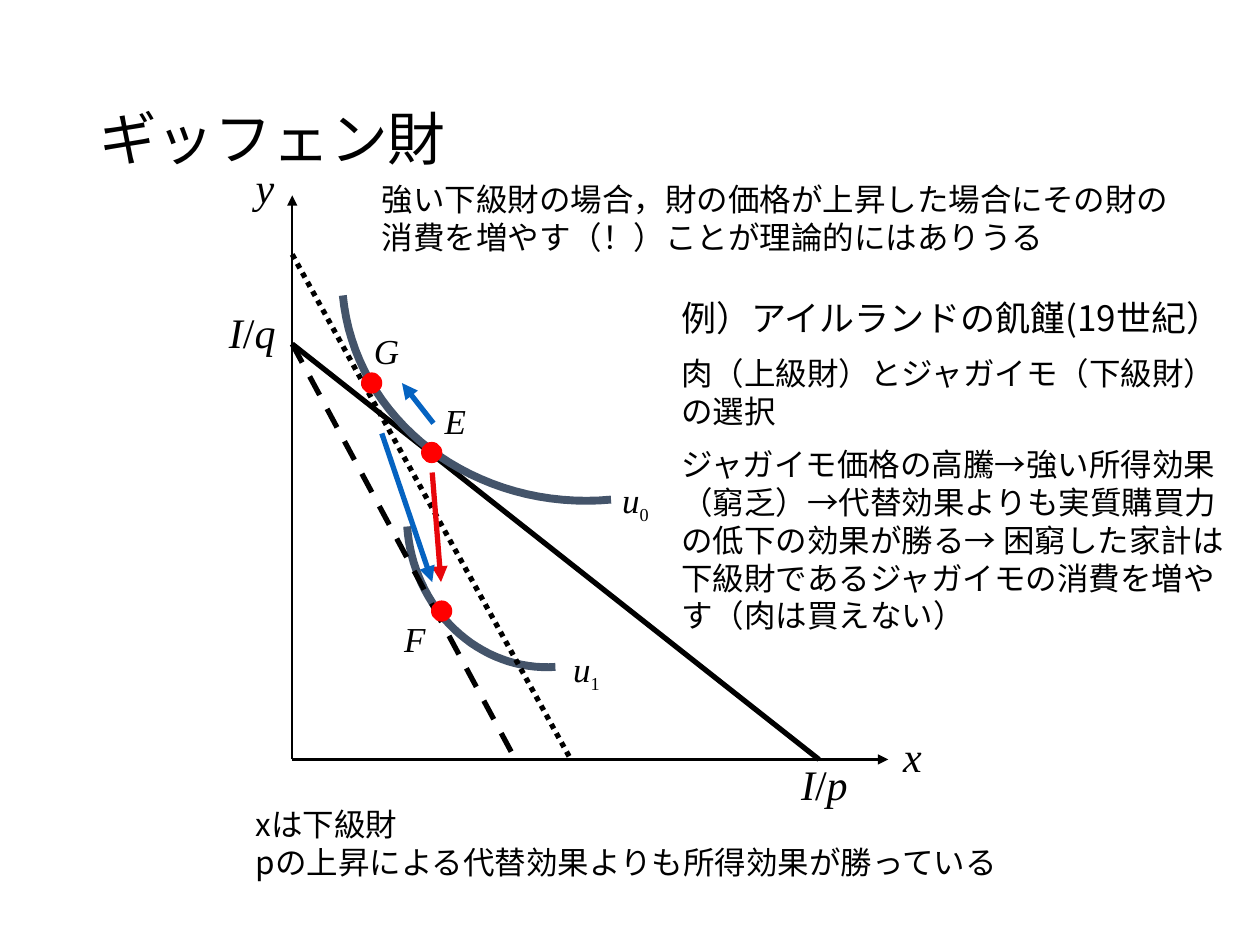
"""Build the slide on Giffen goods: budget lines, indifference curves and notes."""
from math import cos, pi, sin

from lxml.etree import SubElement
from pptx import Presentation
from pptx.dml.color import RGBColor
from pptx.enum.dml import MSO_LINE as Dash
from pptx.enum.shapes import MSO_CONNECTOR as Connector, MSO_SHAPE as Shape
from pptx.enum.text import MSO_ANCHOR as Anchor, MSO_AUTO_SIZE as AutoSize, PP_ALIGN as Align
from pptx.oxml.ns import qn
from pptx.util import Pt

BLACK = RGBColor(0x00, 0x00, 0x00)
SLATE = RGBColor(0x44, 0x54, 0x6A)
BLUE = RGBColor(0x05, 0x63, 0xC1)
CRIMSON = RGBColor(0xE8, 0x06, 0x0B)
RED = RGBColor(0xFF, 0x00, 0x00)
JAPANESE = "Noto Sans CJK JP"
SERIF = "Times New Roman"


def format_span(span, size, name, italic=None):
    span.font.size = Pt(size)
    span.font.name = name
    span.font.italic = italic
    span.font.color.rgb = BLACK
    SubElement(span.font._element, qn("a:ea"), typeface=name)


def add_line(start, end, color, width, dash=None, arrow=False):
    line = slide.shapes.add_connector(Connector.STRAIGHT, *map(Pt, start + end))
    line.line.color.rgb = color
    line.line.width = Pt(width)
    if dash:
        line.line.dash_style = dash
    if arrow:
        SubElement(line.line._get_or_add_ln(), qn("a:tailEnd"), type="triangle")
    SubElement(line._element.spPr, qn("a:effectLst"))


deck = Presentation()
deck.slide_width, deck.slide_height = Pt(720), Pt(540)
slide = deck.slides.add_slide(deck.slide_layouts[5])

title = slide.shapes.title
title.left, title.top, title.width, title.height = Pt(49.5), Pt(28.8), Pt(621), Pt(104.4)
title.text_frame.text = "ギッフェン財"
title.text_frame.vertical_anchor = Anchor.MIDDLE
title.text_frame.auto_size = AutoSize.NONE
para = title.text_frame.paragraphs[0]
para.alignment = Align.LEFT
para.line_spacing = 0.9
format_span(para.runs[0], 33, JAPANESE)

origin = (167, 434)
income_over_q = (167, 196.6)
add_line(origin, (167, 111.6), BLACK, 1.25, arrow=True)
add_line(origin, (507.6, 434), BLACK, 1.25, arrow=True)
add_line(income_over_q, (468, 434), BLACK, 3)

curves = [(201.6, 162, 141.8, 130.3, 174.7), (235.4, 298.1, 79.2, 85.7, 176.2)]
steps = 32
for left, top, width, height, rotation in curves:
    angles = [pi / 2 * step / steps for step in range(1, steps + 1)]
    points = [(Pt(left + width * sin(a)), Pt(top + height * (1 - cos(a)))) for a in angles]
    builder = slide.shapes.build_freeform(Pt(left), Pt(top))
    builder.add_line_segments(points, close=False)
    curve = builder.convert_to_shape()
    curve.rotation = rotation
    curve.shadow.inherit = False
    curve.fill.background()
    curve.line.color.rgb = SLATE
    curve.line.width = Pt(4.5)

add_line((167, 145.4), (326.2, 434), BLACK, 3, dash=Dash.ROUND_DOT)
add_line(income_over_q, (294.5, 434), BLACK, 3, dash=Dash.DASH)
add_line((247, 270), (252, 332.6), CRIMSON, 3, arrow=True)
add_line((247.7, 241.9), (229.7, 218.9), BLUE, 3, arrow=True)
add_line((218.2, 247.7), (247, 332.6), BLUE, 3, arrow=True)

diameter = 11.4
for center_x, center_y in [(212.4, 218.9), (246.7, 258.6), (252.4, 349.2)]:
    dot = slide.shapes.add_shape(Shape.OVAL, Pt(center_x - diameter / 2), Pt(center_y - diameter / 2),
                                 Pt(diameter), Pt(diameter))
    dot.shadow.inherit = False
    dot.fill.solid()
    dot.fill.fore_color.rgb = RED
    dot.line.color.rgb = RED
    dot.line.width = Pt(0.75)

labels = [
    ("x", 509, 414, 28, 24), ("y", 139, 88.6, 22.3, 24),
    ("I/p", 450.7, 429.8, 45.4, 24), ("I/q", 123.8, 171.4, 45.4, 24),
    ("u0", 348.5, 270, 33.8, 20), ("u1", 320.4, 366.5, 33.8, 20),
    ("E", 247, 224.6, 23, 20), ("F", 223.9, 349.2, 23, 20), ("G", 206.6, 185, 28, 20),
]
for text, left, top, width, size in labels:
    box = slide.shapes.add_textbox(Pt(left), Pt(top), Pt(width), Pt(size * 1.5))
    box.text_frame.word_wrap = True
    para = box.text_frame.paragraphs[0]
    for character in text:
        span = para.add_run()
        span.text = character
        subscript = character.isdigit()
        format_span(span, 18 if subscript else size, SERIF, character.isalpha())
        if subscript:
            span.font._element.set("baseline", "-25000")

notes = [
    (139, 456.5, 487.4, 51, 0, [
        ("xは下級財", 18),
        ("pの上昇による代替効果よりも所得効果が勝っている", 18)]),
    (382.3, 165.6, 329, 206, 9, [
        ("例）アイルランドの飢饉(19世紀）", 20),
        ("肉（上級財）とジャガイモ（下級財）の選択", 18),
        ("ジャガイモ価格の高騰→強い所得効果（窮乏）→代替効果よりも実質購買力の低下の効果が勝る→ "
         "困窮した家計は下級財であるジャガイモの消費を増やす（肉は買えない）", 18)]),
    (211, 99.4, 465, 51, 0, [
        ("強い下級財の場合，財の価格が上昇した場合にその財の消費を増やす（！）"
         "ことが理論的にはありうる", 18)]),
]
for left, top, width, height, gap, lines in notes:
    box = slide.shapes.add_textbox(Pt(left), Pt(top), Pt(width), Pt(height))
    frame = box.text_frame
    frame.word_wrap = True
    frame.text = "\n".join(text for text, size in lines)
    for index, (para, (text, size)) in enumerate(zip(frame.paragraphs, lines)):
        para.space_before = Pt(gap if index else 0)
        format_span(para.runs[0], size, JAPANESE)

deck.save("out.pptx")
